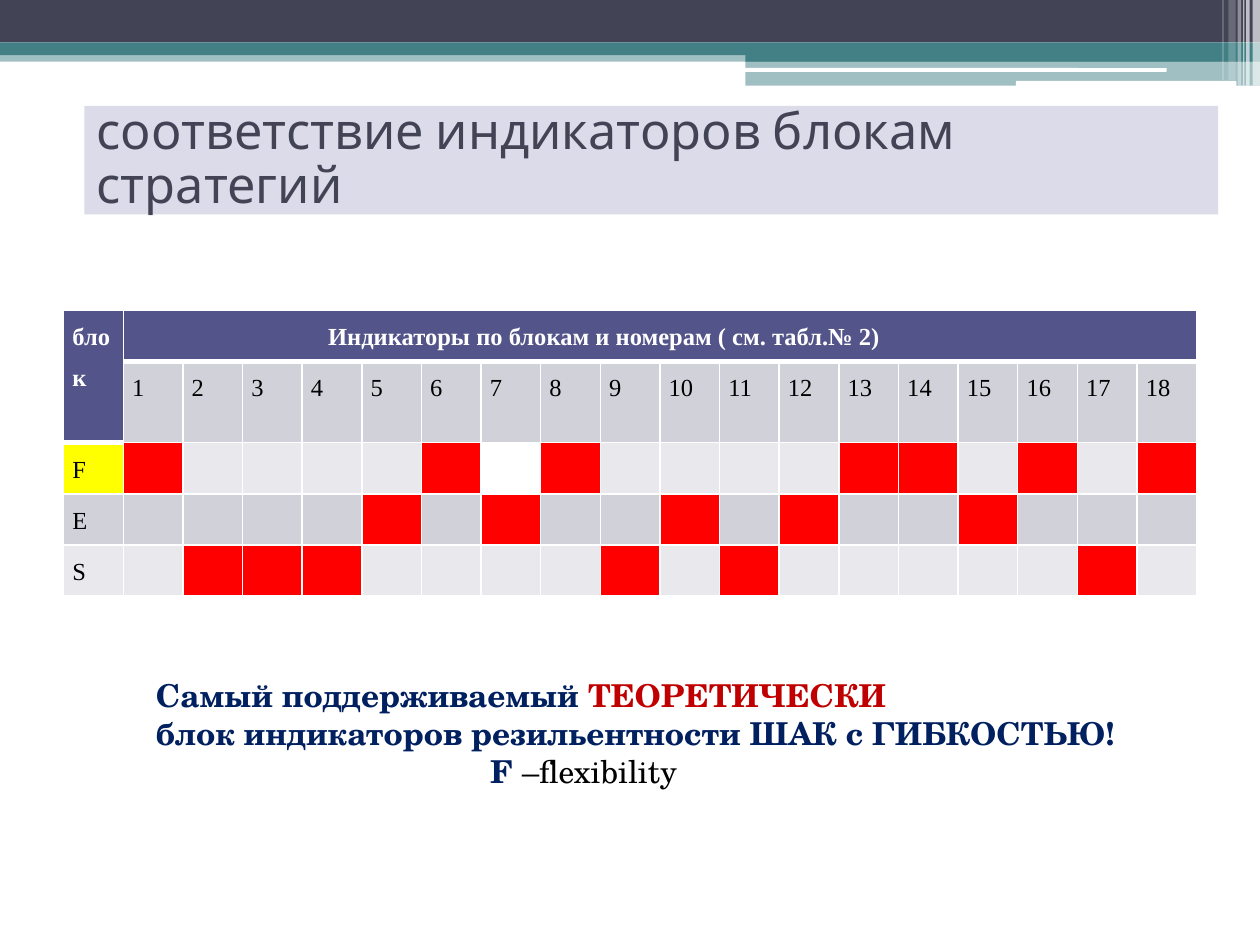
import pptx
import pptx.util
import pptx.dml.color
import pptx.enum.shapes
import pptx.enum.text
import pptx.oxml.ns
import lxml.etree
import dataclasses

Pt = pptx.util.Pt
SHAPE = pptx.enum.shapes.MSO_SHAPE
ALIGN = pptx.enum.text.PP_ALIGN
ANCHOR = pptx.enum.text.MSO_ANCHOR


@dataclasses.dataclass(frozen=True)
class Theme:
    white: str = "FFFFFF"
    black: str = "000000"
    dark: str = "424456"
    teal: str = "438086"
    panel: str = "DBDBE9"
    head: str = "53548A"
    band: str = "D1D1DA"
    pale: str = "E9E9ED"
    mark: str = "FF0000"
    key: str = "FFFF00"
    navy: str = "002060"
    alert: str = "C00000"
    title: float = 28.8
    cell: float = 14
    note: float = 18
    sans: str = "Karla"
    serif: str = "Times New Roman"
    book: str = "TeX Gyre Schola"


THEME = Theme()


def rgb(color):
    return pptx.dml.color.RGBColor.from_string(color)


def style(run, font, size, color, bold=False):
    run.font.name = font
    run.font.size = Pt(size)
    run.font.bold = bold
    run.font.color.rgb = rgb(color)


def indent(para, gap):
    props = para._p.get_or_add_pPr()
    props.set("marL", str(Pt(gap)))
    props.set("indent", "0")


def block(slide, box, color, alpha=100, kind=SHAPE.RECTANGLE):
    shape = slide.shapes.add_shape(kind, *(Pt(v) for v in box))
    shape.shadow.inherit = False
    shape.line.fill.background()
    shape.fill.solid()
    shape.fill.fore_color.rgb = rgb(color)
    if alpha < 100:
        tone = shape.fill._xPr.find(".//" + pptx.oxml.ns.qn("a:srgbClr"))
        lxml.etree.SubElement(tone, pptx.oxml.ns.qn("a:alpha"), val=str(alpha * 1000))
    return shape


def banner(slide, box):
    left, top, width, height = box
    right = left + width
    # Full-width bands, then the step on the right
    for x, y, high, color, alpha in (
        (0, 28.8, 6.48, THEME.teal, 50),
        (0, 0, 24.3, THEME.dark, 100),
        (0, 24.3, 7.2, THEME.teal, 100),
        (426, 28, 7.2, THEME.teal, 100),
        (426, 35, height - 35, THEME.teal, 50),
    ):
        block(slide, (left + x, top + y, width - x, high), color, alpha)
    # White rules
    for x, y, wide, high in ((425.5, 38.9, 241.2, 2.16), (580.5, 46.3, 126, 2.88)):
        block(slide, (left + x, top + y, wide, high), THEME.white,
              kind=SHAPE.ROUNDED_RECTANGLE)
    # Translucent stripes, measured from the right edge
    for back, wide, high, alpha in (
        (4.2, 4.2, height, 65), (7.9, 2, height, 65), (9.6, 0.7, height, 60),
        (12.8, 2, height, 40), (18, 4.2, 46, 20), (21.5, 0.7, 46, 30),
    ):
        block(slide, (right - back, top, wide, high), THEME.white, alpha)


def title(slide, box):
    shape = block(slide, box, THEME.panel)
    frame = shape.text_frame
    frame.word_wrap = True
    frame.vertical_anchor = ANCHOR.MIDDLE
    frame.text = "соответствие индикаторов блокам стратегий"
    para = frame.paragraphs[0]
    para.alignment = ALIGN.LEFT
    para.line_spacing = 0.9
    style(para.runs[0], THEME.sans, THEME.title, THEME.dark)


def edges(cell, **sides):
    props = cell._tc.get_or_add_tcPr()
    for spot, side in enumerate("LRTB"):
        line = lxml.etree.Element(pptx.oxml.ns.qn("a:ln" + side),
                                  w=str(Pt(sides.get(side, 1))))
        fill = lxml.etree.SubElement(line, pptx.oxml.ns.qn("a:solidFill"))
        lxml.etree.SubElement(fill, pptx.oxml.ns.qn("a:srgbClr"), val=THEME.white)
        props.insert(spot, line)


def fill(cell, text, back, color=THEME.black, bold=False):
    cell.margin_left = cell.margin_right = Pt(5.04)
    cell.margin_top = cell.margin_bottom = 0
    cell.fill.solid()
    cell.fill.fore_color.rgb = rgb(back)
    para = cell.text_frame.paragraphs[0]
    para.font.size = Pt(THEME.cell)
    if text:
        para.text = text
        para.alignment = ALIGN.JUSTIFY
        para.line_spacing = 1.5
        style(para.runs[0], THEME.serif, THEME.cell, color, bold)


def grid(slide, box):
    marks = {"F": {1, 6, 8, 13, 14, 16, 18}, "E": {5, 7, 10, 12, 15},
             "S": {2, 3, 4, 9, 11, 17}}
    count = 18
    rows = len(marks) + 2
    left, top, width, height = box
    table = slide.shapes.add_table(rows, count + 1, *(Pt(v) for v in box)).table
    for col in table.columns:
        col.width = Pt(width / (count + 1))
    for row in table.rows:
        row.height = Pt(height / rows)

    # Headings
    for col in range(count + 1):
        fill(table.cell(0, col), "", THEME.head)
        fill(table.cell(1, col), str(col) if col else "",
             THEME.band if col else THEME.head)
    fill(table.cell(0, 0), "блок", THEME.head, THEME.white, True)
    fill(table.cell(0, 1), "Индикаторы по блокам и номерам ( см. табл.№ 2)",
         THEME.head, THEME.white, True)
    indent(table.cell(0, 1).text_frame.paragraphs[0], 112)

    # One row of marks for each block
    for row, (name, hits) in enumerate(marks.items(), 2):
        base = THEME.band if row % 2 else THEME.pale
        fill(table.cell(row, 0), name, THEME.key if name == "F" else base)
        for col in range(1, count + 1):
            fill(table.cell(row, col), "", THEME.mark if col in hits else base)
    fill(table.cell(2, 7), "", THEME.white)

    # Thick rule under the headings
    for row in range(rows):
        for col in range(count + 1):
            last = 0 if col else 1
            edges(table.cell(row, col), T=3 if row == last + 1 else 1,
                  B=3 if row == last else 1)
    table.cell(0, 0).merge(table.cell(1, 0))
    table.cell(0, 1).merge(table.cell(0, count))


def note(slide, box):
    frame = slide.shapes.add_textbox(*(Pt(v) for v in box)).text_frame
    frame.word_wrap = True
    lines = (
        (("Самый поддерживаемый ", THEME.navy, True), ("ТЕОРЕТИЧЕСКИ", THEME.alert, True)),
        (("блок индикаторов резильентности ШАК с ГИБКОСТЬЮ!", THEME.navy, True),),
        (("F ", THEME.navy, True), ("–flexibility", THEME.black, False)),
    )
    for spot, parts in enumerate(lines):
        para = frame.add_paragraph() if spot else frame.paragraphs[0]
        for text, color, bold in parts:
            run = para.add_run()
            run.text = text
            style(run, THEME.book, THEME.note, color, bold)
    indent(para, 191)


def main():
    deck = pptx.Presentation()
    deck.slide_width, deck.slide_height = Pt(720), Pt(540)
    slide = deck.slides.add_slide(deck.slide_layouts[6])
    banner(slide, (0, 0, 720, 49))
    title(slide, (48.2, 60.5, 648, 62))
    grid(slide, (36.4, 177.3, 647.5, 146))
    note(slide, (82, 383, 595.5, 72.7))
    deck.save("out.pptx")


if __name__ == "__main__":
    main()
